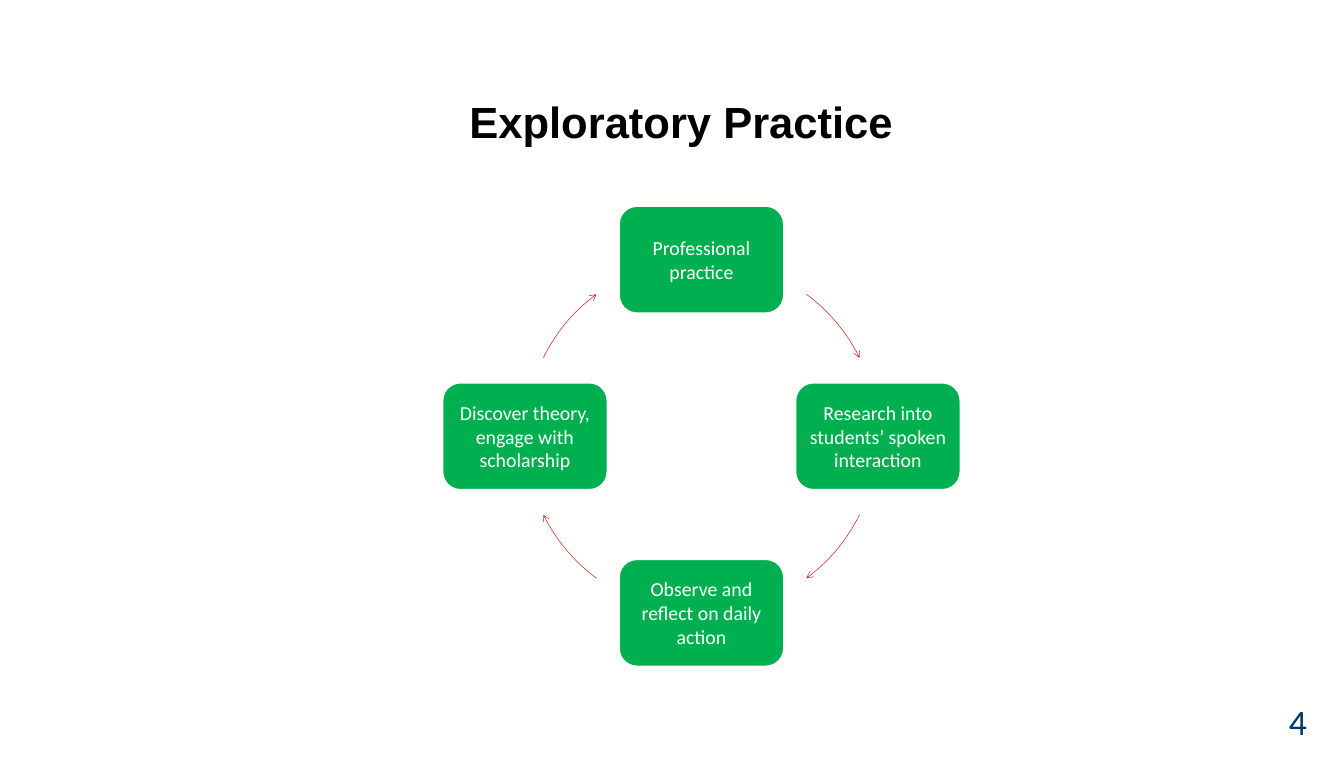
from dataclasses import dataclass
from math import cos, radians, sin

from lxml import etree
from pptx import Presentation
from pptx.dml.color import RGBColor
from pptx.enum.shapes import MSO_SHAPE
from pptx.enum.text import MSO_ANCHOR, PP_ALIGN
from pptx.oxml.ns import qn
from pptx.util import Cm, Pt

ROUNDED = MSO_SHAPE.ROUNDED_RECTANGLE
ARC = MSO_SHAPE.ARC
MIDDLE = MSO_ANCHOR.MIDDLE
BOTTOM = MSO_ANCHOR.BOTTOM
CENTER = PP_ALIGN.CENTER


@dataclass(frozen=True)
class Theme:
    paper: RGBColor = RGBColor(0xFF, 0xFF, 0xFE)
    ink: RGBColor = RGBColor(0x00, 0x00, 0x00)
    navy: RGBColor = RGBColor(0x00, 0x38, 0x65)
    green: RGBColor = RGBColor(0x00, 0xB0, 0x50)
    red: RGBColor = RGBColor(0xCF, 0x1C, 0x20)
    title_font: str = "Arial"
    body_font: str = "Calibri"
    title_size: int = 44
    number_size: int = 36
    step_size: int = 20


THEME = Theme()

# Cycle geometry, in centimetres and degrees clockwise from the right
CENTER_X, CENTER_Y, RADIUS = 25, 15.54, 6.29
STEP_WIDTH, STEP_HEIGHT = 5.87, 3.81
STEP_INSET = 0.2
NEAR_SIDE, NEAR_POLE = 26.4, 53.5

# Steps run clockwise from the top
STEPS = [
    "Professional practice",
    "Research into students’ spoken interaction",
    "Observe and reflect on daily action",
    "Discover theory, engage with scholarship",
]


def style_text(paragraph, font, size, color, bold=False):
    for span in paragraph.runs:
        span.font.name = font
        span.font.size = Pt(size)
        span.font.color.rgb = color
        span.font.bold = bold


def add_title(page, text):
    box = page.shapes.add_textbox(Cm(13), Cm(3.28), Cm(23.95), Cm(2.11))
    frame = box.text_frame
    frame.word_wrap = True
    frame.vertical_anchor = BOTTOM
    frame.text = "\t" + text
    para = frame.paragraphs[0]
    para.line_spacing = 0.9
    tabs = etree.SubElement(para._p.get_or_add_pPr(), qn("a:tabLst"))
    etree.SubElement(tabs, qn("a:tab"), pos=str(Cm(3.48)), algn="l")
    style_text(para, THEME.title_font, THEME.title_size, THEME.ink, bold=True)


def add_page_number(page, number):
    box = page.shapes.add_textbox(Cm(45.69), Cm(24.99), Cm(2.21), Cm(1.42))
    frame = box.text_frame
    frame.word_wrap = True
    frame.vertical_anchor = MIDDLE
    frame.text = number
    style_text(frame.paragraphs[0], THEME.body_font, THEME.number_size, THEME.navy)


def add_step(page, text, angle):
    left = CENTER_X + RADIUS * cos(radians(angle)) - STEP_WIDTH / 2
    top = CENTER_Y + RADIUS * sin(radians(angle)) - STEP_HEIGHT / 2
    box = page.shapes.add_shape(ROUNDED, Cm(left), Cm(top), Cm(STEP_WIDTH), Cm(STEP_HEIGHT))
    box.shadow.inherit = False
    box.fill.solid()
    box.fill.fore_color.rgb = THEME.green
    box.line.color.rgb = THEME.paper
    box.line.width = Pt(1.5)
    frame = box.text_frame
    frame.word_wrap = True
    frame.vertical_anchor = MIDDLE
    frame.margin_left = frame.margin_right = Cm(STEP_INSET)
    frame.margin_top = frame.margin_bottom = Cm(STEP_INSET)
    frame.text = text
    para = frame.paragraphs[0]
    para.alignment = CENTER
    style_text(para, THEME.body_font, THEME.step_size, THEME.paper)


def add_arc_arrow(page, start, end):
    arc = page.shapes.add_shape(
        ARC, Cm(CENTER_X - RADIUS), Cm(CENTER_Y - RADIUS), Cm(2 * RADIUS), Cm(2 * RADIUS))
    arc.shadow.inherit = False
    arc.fill.background()
    # Angles are stored in 60000ths of a degree, adjustments in 100000ths
    arc.adjustments[0] = start * 0.6
    arc.adjustments[1] = end * 0.6
    arc.line.color.rgb = THEME.red
    arc.line.width = Pt(0.5)
    etree.SubElement(arc.line._get_or_add_ln(), qn("a:tailEnd"), type="arrow")


def add_cycle(page):
    arcs = [
        (360 - NEAR_POLE, 360 - NEAR_SIDE),
        (NEAR_SIDE, NEAR_POLE),
        (180 - NEAR_POLE, 180 - NEAR_SIDE),
        (180 + NEAR_SIDE, 180 + NEAR_POLE),
    ]
    for index, (text, (start, end)) in enumerate(zip(STEPS, arcs)):
        add_step(page, text, 90 * index - 90)
        add_arc_arrow(page, start, end)


def main():
    deck = Presentation()
    deck.slide_width, deck.slide_height = Cm(47.9), Cm(27)
    page = deck.slides.add_slide(deck.slide_layouts[6])
    page.background.fill.solid()
    page.background.fill.fore_color.rgb = THEME.paper

    add_page_number(page, "4")
    add_title(page, "Exploratory Practice")
    add_cycle(page)
    deck.save("out.pptx")


if __name__ == "__main__":
    main()
